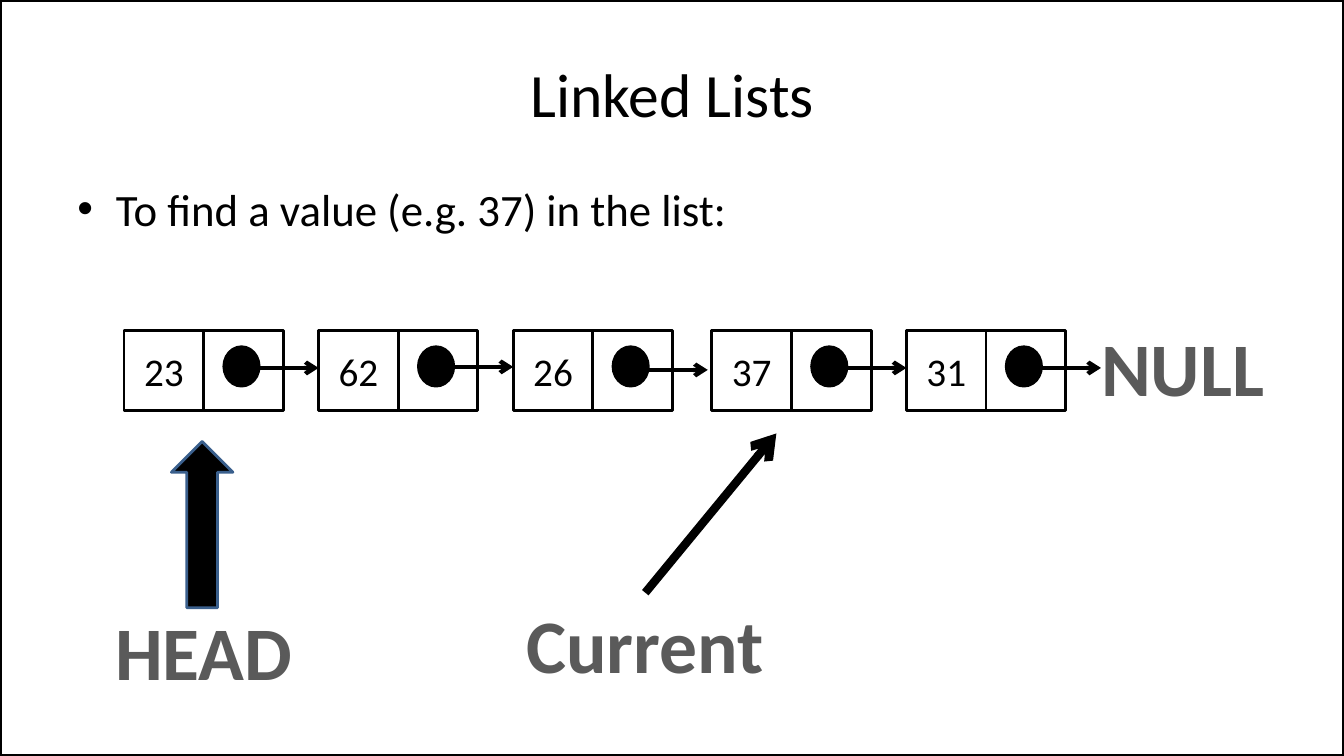
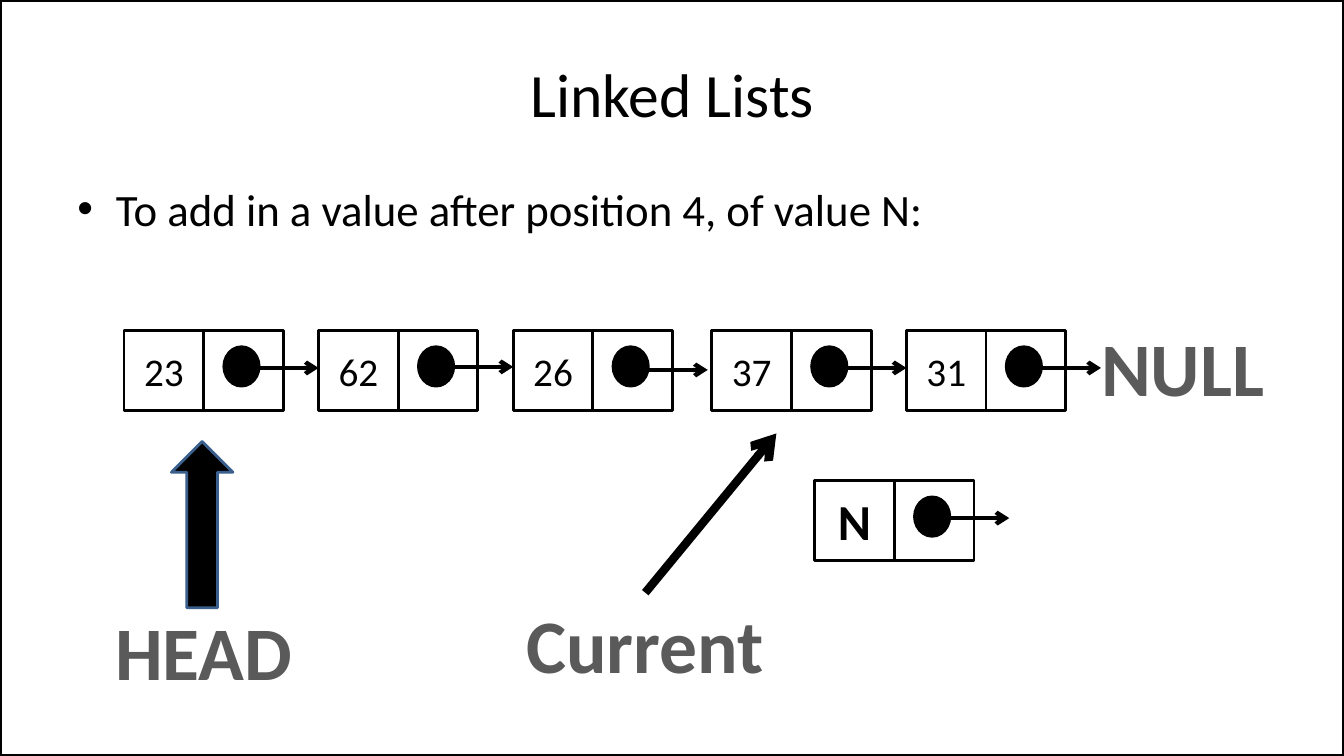
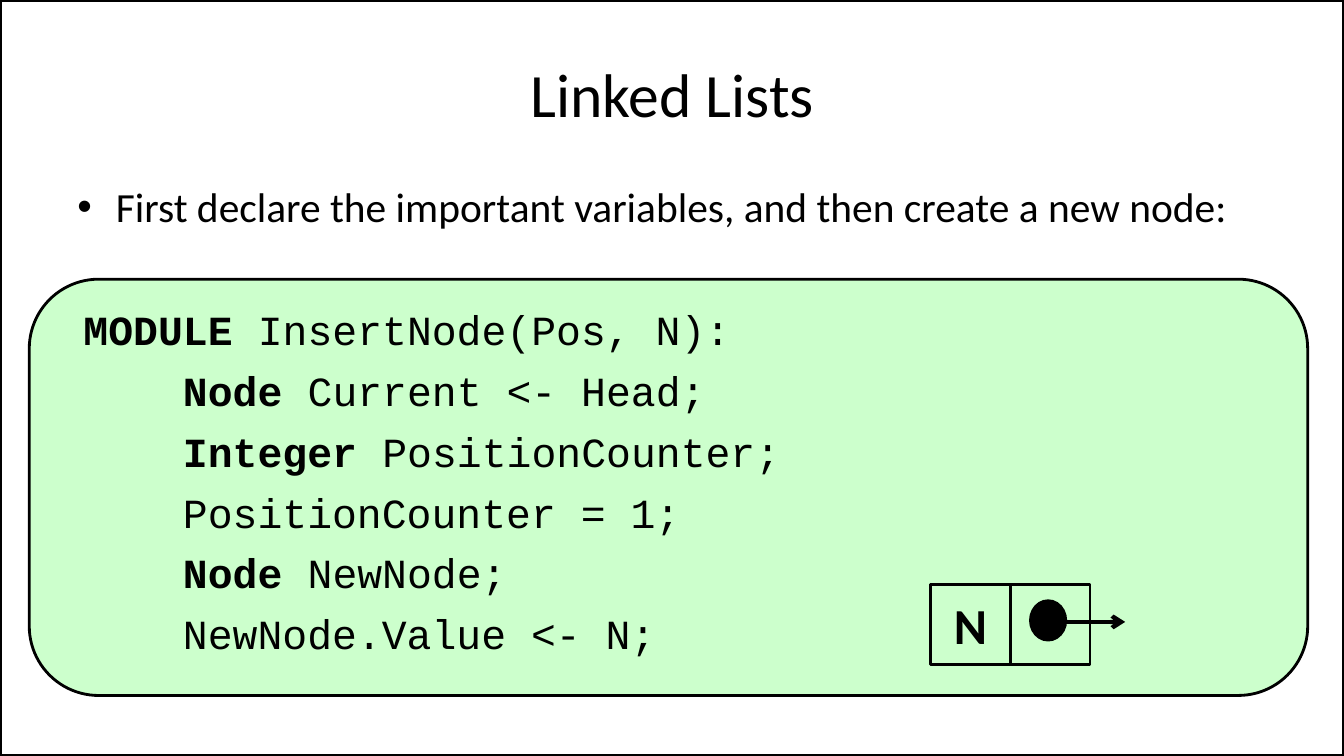
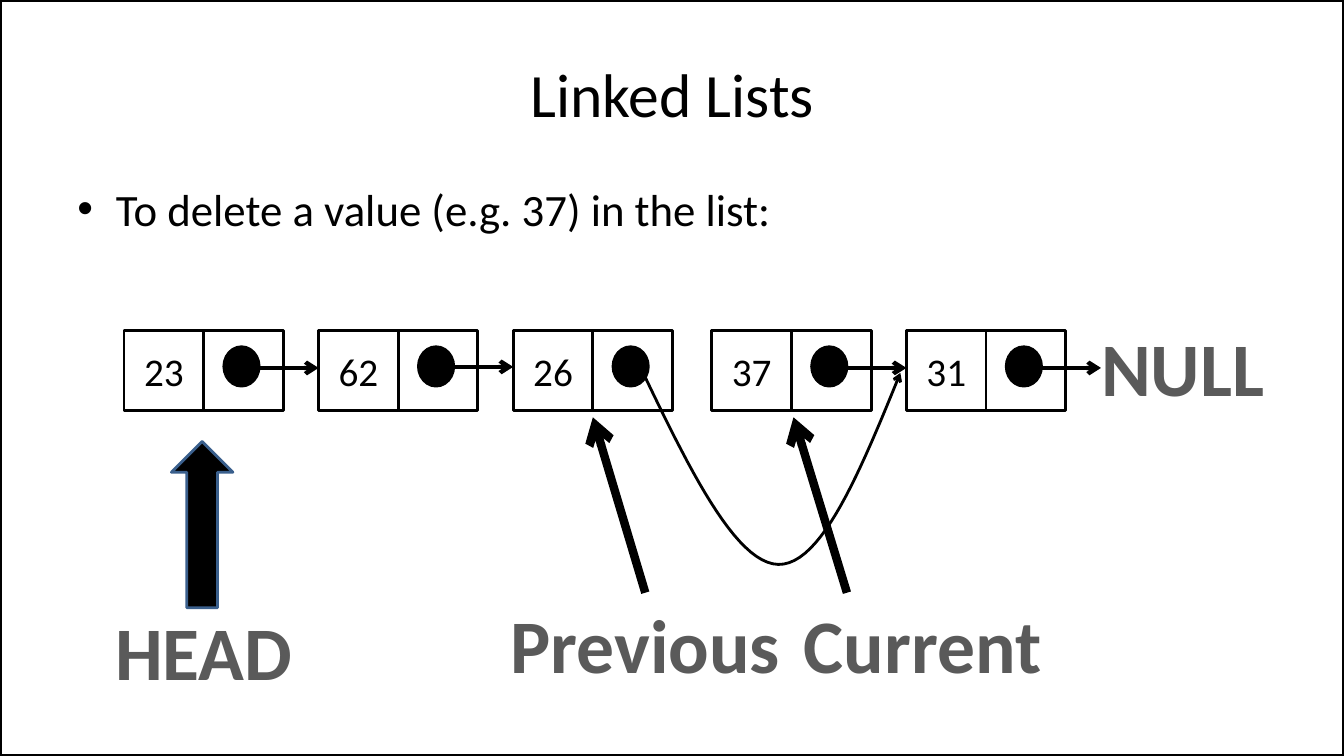
from lxml import etree
from pptx import Presentation
from pptx.dml.color import RGBColor
from pptx.enum.shapes import MSO_CONNECTOR, MSO_SHAPE
from pptx.enum.text import MSO_ANCHOR, PP_ALIGN
from pptx.oxml.ns import qn
from pptx.util import Pt

PX = 9144  # 100 px to the inch
RECT = MSO_SHAPE.RECTANGLE
OVAL = MSO_SHAPE.OVAL
ROUNDED = MSO_SHAPE.ROUNDED_RECTANGLE
UP_ARROW = MSO_SHAPE.UP_ARROW
STRAIGHT = MSO_CONNECTOR.STRAIGHT
CENTER = PP_ALIGN.CENTER
MIDDLE = MSO_ANCHOR.MIDDLE
BLACK = RGBColor(0x00, 0x00, 0x00)
GRAY = RGBColor(0x5A, 0x5A, 0x5A)
BLUE = RGBColor(0x3A, 0x5F, 0x8C)
GREEN = RGBColor(0xCC, 0xFF, 0xCC)
FONT = "Calibri"
CODE_FONT = "Courier New"

CELL = 79
LIST_TOP = 328
LINK_LENGTH = 59
HEAD_LABEL = ("HEAD", 103, 595, 198)
NULL_LABEL = ("NULL", 1081, 313, 184)
CURRENT_LABEL = ("Current", 511, 588, 258)
CURRENT_ARROW = (640, 588, 770, 430)

# Node: value, left, top, height of the link below the top (None for no link)
FIRST_NODES = [("23", 123, LIST_TOP, 37), ("62", 316, LIST_TOP, 36)]
LAST_NODES = [("37", 706, LIST_TOP, 37), ("31", 899, LIST_TOP, 37)]
LINKED = FIRST_NODES + [("26", 509, LIST_TOP, 39)] + LAST_NODES
UNLINKED = FIRST_NODES + [("26", 509, LIST_TOP, None)] + LAST_NODES

# Each line of code is a list of (text, bold) runs
CODE = [
    [("MODULE ", True), ("InsertNode(Pos, N):", False)],
    [("    Node ", True), ("Current <- Head;", False)],
    [("    Integer ", True), ("PositionCounter;", False)],
    [("    PositionCounter = 1;", False)],
    [("    Node ", True), ("NewNode;", False)],
    [("    NewNode.Value <- N;", False)],
]

# Two Bezier pieces that bypass the deleted node
BYPASS = [
    [(635, 364), (682, 462), (729, 559), (772, 560)],
    [(772, 560), (815, 561), (854, 466), (893, 370)],
]
STEPS = 24

SLIDES = [
    dict(bullet="To find a value (e.g. 37) in the list:", size=32, code=[],
         nodes=LINKED, labels=[NULL_LABEL, CURRENT_LABEL, HEAD_LABEL],
         arrows=[CURRENT_ARROW], curve=[]),
    dict(bullet="To add in a value after position 4, of value N:", size=32, code=[],
         nodes=LINKED + [("N", 808, 477, 37)],
         labels=[NULL_LABEL, CURRENT_LABEL, HEAD_LABEL],
         arrows=[CURRENT_ARROW], curve=[]),
    dict(bullet="First declare the important variables, and then create a new node:",
         size=29.6, code=CODE, nodes=[("N", 923, 580, 37)],
         labels=[], arrows=[], curve=[]),
    dict(bullet="To delete a value (e.g. 37) in the list:", size=32, code=[],
         nodes=UNLINKED,
         labels=[NULL_LABEL, HEAD_LABEL, ("Previous", 495, 588, 290),
                 ("Current", 786, 588, 258)],
         arrows=[(640, 588, 588, 414), (840, 588, 787, 414)], curve=BYPASS),
]


def add_shape(s, kind, x, y, w, h, fill=None, line=BLACK, width=2):
    sp = s.shapes.add_shape(kind, x * PX, y * PX, w * PX, h * PX)
    sp.shadow.inherit = False
    if fill is None:
        sp.fill.background()
    else:
        sp.fill.solid()
        sp.fill.fore_color.rgb = fill
    sp.line.color.rgb = line
    sp.line.width = Pt(width)
    return sp


def write(p, text, size, color=BLACK, bold=False, font=FONT):
    """Append a formatted run to a paragraph."""
    r = p.add_run()
    r.text = text
    r.font.name = font
    r.font.size = Pt(size)
    r.font.bold = bold
    r.font.color.rgb = color


prs = Presentation()
prs.slide_width = 1333 * PX
prs.slide_height = 750 * PX

for content in SLIDES:
    s = prs.slides.add_slide(prs.slide_layouts[6])
    add_shape(s, RECT, 0, 0, 1333, 750, width=3)
    if content["code"]:
        add_shape(s, ROUNDED, 29, 277, 1268, 413, fill=GREEN)

    tf = s.shapes.add_textbox(67 * PX, 30 * PX, 1200 * PX, 125 * PX).text_frame
    tf.word_wrap = True
    tf.vertical_anchor = MIDDLE
    tf.paragraphs[0].alignment = CENTER
    write(tf.paragraphs[0], "Linked Lists", 44)

    tf = s.shapes.add_textbox(67 * PX, 175 * PX, 1200 * PX, 495 * PX).text_frame
    tf.word_wrap = True
    p = tf.paragraphs[0]
    pPr = p._p.get_or_add_pPr()
    pPr.set("marL", str(38 * PX))
    pPr.set("indent", str(-38 * PX))
    etree.SubElement(pPr, qn("a:buFont"), typeface="Arial")
    etree.SubElement(pPr, qn("a:buChar"), char="•")
    write(p, content["bullet"], content["size"])
    for i, runs in enumerate(content["code"]):
        p = tf.add_paragraph()
        p._p.get_or_add_pPr().set("marL", str(6 * PX))
        p.space_before = Pt(8 if i else 52)
        for text, bold in runs:
            write(p, text, content["size"], bold=bold, font=CODE_FONT)

    arrows = [(*ends, 6) for ends in content["arrows"]]
    for value, x, y, link in content["nodes"]:
        is_new = value == "N"
        tf = add_shape(s, RECT, x, y, CELL, CELL).text_frame
        tf.vertical_anchor = MIDDLE
        tf.paragraphs[0].alignment = CENTER
        write(tf.paragraphs[0], value, 36 if is_new else 28, bold=is_new)
        add_shape(s, OVAL, x + 99, y + 16, 35, 39, fill=BLACK)
        add_shape(s, RECT, x + CELL, y, CELL, CELL)
        if link is not None:
            start = x + 134
            arrows.append((start, y + link, start + LINK_LENGTH, y + link, 3))

    for text, x, y, w in content["labels"]:
        tf = s.shapes.add_textbox(x * PX, y * PX, w * PX, 101 * PX).text_frame
        tf.word_wrap = False
        tf.paragraphs[0].alignment = CENTER
        write(tf.paragraphs[0], text, 54, color=GRAY, bold=True)
    if HEAD_LABEL in content["labels"]:
        add_shape(s, UP_ARROW, 170, 438, 61, 165, fill=BLACK, line=BLUE)

    pointers = []
    for x1, y1, x2, y2, width in arrows:
        line = s.shapes.add_connector(STRAIGHT, x1 * PX, y1 * PX, x2 * PX, y2 * PX)
        line.line.width = Pt(width)
        pointers.append(line)
    if content["curve"]:
        points = []
        for a, b, c, d in content["curve"]:
            for t in (step / STEPS for step in range(1, STEPS + 1)):
                u = 1 - t
                points.append([
                    PX * (u**3 * a[k] + 3 * u * u * t * b[k] + 3 * u * t * t * c[k] + t**3 * d[k])
                    for k in (0, 1)
                ])
        x, y = content["curve"][0][0]
        builder = s.shapes.build_freeform(x * PX, y * PX)
        builder.add_line_segments(points, close=False)
        curve = builder.convert_to_shape()
        curve.fill.background()
        curve.line.width = Pt(2)
        pointers.append(curve)
    for pointer in pointers:
        pointer.line.color.rgb = BLACK
        spPr = pointer._element.spPr
        etree.SubElement(spPr.find(qn("a:ln")), qn("a:tailEnd"), type="arrow")
        etree.SubElement(spPr, qn("a:effectLst"))

prs.save("out.pptx")
